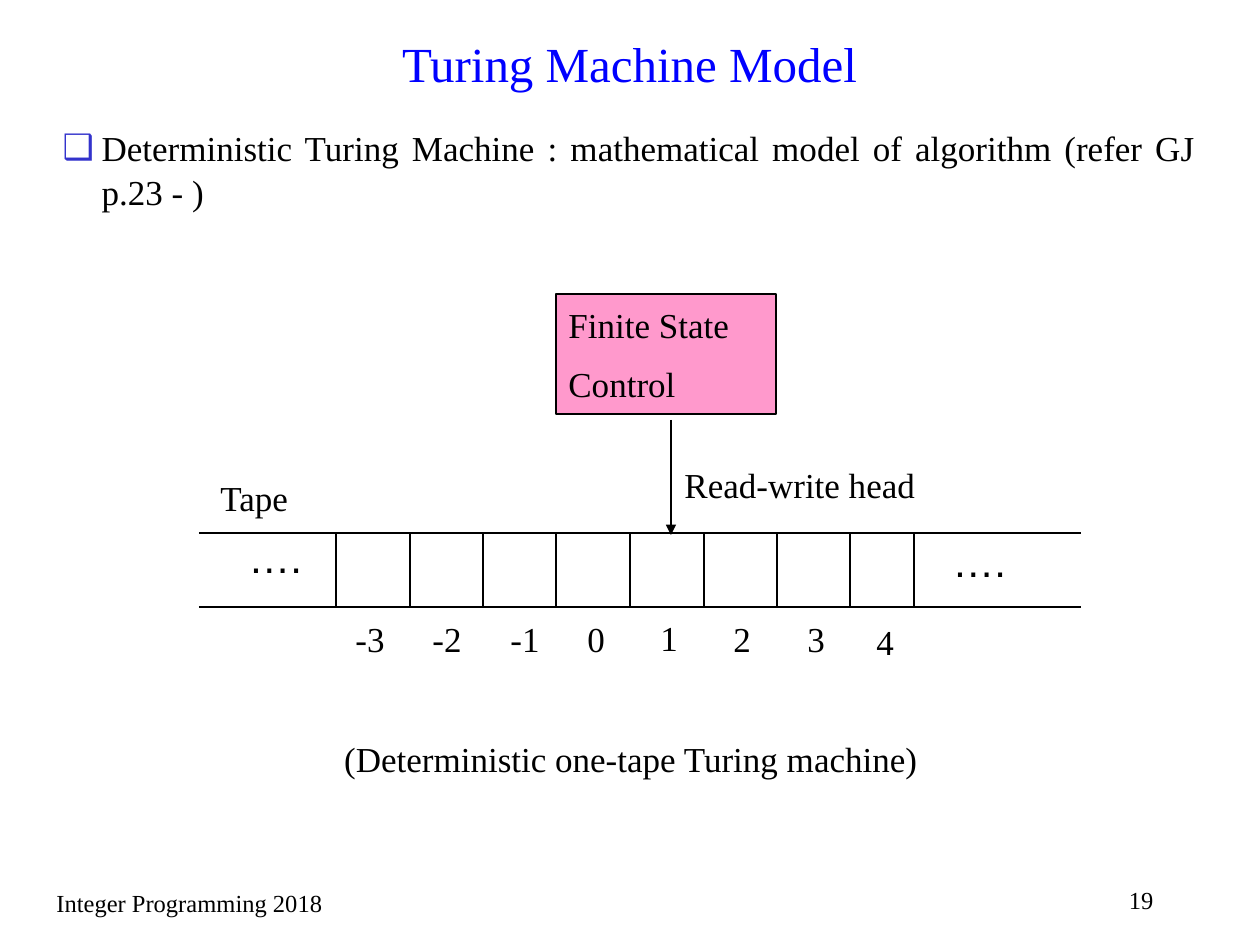
from lxml.etree import SubElement
from pptx import Presentation
from pptx.dml.color import RGBColor
from pptx.enum.shapes import MSO_CONNECTOR, MSO_SHAPE
from pptx.enum.text import MSO_ANCHOR, MSO_AUTO_SIZE, PP_ALIGN
from pptx.oxml.ns import qn
from pptx.util import Emu, Pt

COLORS = {
    "title": "0000FF",
    "text": "000000",
    "bullet": "3333CC",
    "control": "FF99CC",
    "line": "000000",
}
PX_PER_INCH = 126


def px(length):
    return Emu(round(length * 914400 / PX_PER_INCH))


def color(name):
    return RGBColor.from_string(COLORS[name])


class SlideBuilder:
    """Holds the text style and the slide being drawn."""

    font_name = "Times New Roman"
    font_size = 20

    def __init__(self, slide):
        self.slide = slide

    def set_text(self, frame, words, size=None, font=None, ink="text",
                 align=PP_ALIGN.LEFT, space_before=0):
        frame.auto_size = MSO_AUTO_SIZE.NONE
        frame.text = words
        for paragraph in frame.paragraphs:
            paragraph.alignment = align
            paragraph.space_before = Pt(space_before)
            paragraph.font.name = font or self.font_name
            paragraph.font.size = Pt(size or self.font_size)
            paragraph.font.color.rgb = color(ink)

    def place(self, placeholder, box):
        (placeholder.left, placeholder.top,
         placeholder.width, placeholder.height) = map(px, box)

    def title(self, box, words):
        title = self.slide.shapes.title
        self.place(title, box)
        self.set_text(title.text_frame, words, 28, ink="title", align=PP_ALIGN.CENTER)
        title.text_frame.vertical_anchor = MSO_ANCHOR.MIDDLE

    def bullet_list(self, box, words):
        body = self.slide.placeholders[1]
        self.place(body, box)
        self.set_text(body.text_frame, words, align=PP_ALIGN.JUSTIFY, space_before=4)
        for paragraph in body.text_frame.paragraphs:
            paragraph.line_spacing = 1.05
            properties = paragraph._p.get_or_add_pPr()
            properties.set("marL", str(px(39)))
            properties.set("indent", str(px(-39)))
            # bullet parts must come before the default run properties
            run_defaults = properties.find(qn("a:defRPr"))
            bullet_color = SubElement(properties, qn("a:buClr"))
            SubElement(bullet_color, qn("a:srgbClr"), val=COLORS["bullet"])
            SubElement(properties, qn("a:buChar"), char="❑")
            properties.append(run_defaults)

    def label(self, box, words, wrap=False, **style):
        frame = self.slide.shapes.add_textbox(*map(px, box)).text_frame
        self.set_text(frame, words, **style)
        frame.word_wrap = wrap

    def block(self, box, words, fill):
        block = self.slide.shapes.add_shape(MSO_SHAPE.RECTANGLE, *map(px, box))
        block.shadow.inherit = False
        block.fill.solid()
        block.fill.fore_color.rgb = color(fill)
        block.line.color.rgb = color("line")
        block.line.width = Pt(1.5)
        self.set_text(block.text_frame, words, space_before=10)
        block.text_frame.vertical_anchor = MSO_ANCHOR.MIDDLE

    def line(self, x1, y1, x2, y2, arrow=False):
        line = self.slide.shapes.add_connector(
            MSO_CONNECTOR.STRAIGHT, px(x1), px(y1), px(x2), px(y2))
        line.line.color.rgb = color("line")
        line.line.width = Pt(0.75)
        if arrow:
            SubElement(line.line._get_or_add_ln(), qn("a:tailEnd"), type="triangle")
        SubElement(line._element.spPr, qn("a:effectLst"))


def main():
    deck = Presentation()
    deck.slide_width, deck.slide_height = px(1260), px(945)
    page = SlideBuilder(deck.slides.add_slide(deck.slide_layouts[1]))

    page.title((94, 26, 1071, 74), "Turing Machine Model")
    page.bullet_list(
        (50, 118, 1158, 101),
        "Deterministic Turing Machine : mathematical model of algorithm (refer GJ p.23 - )")
    page.block((556, 294, 220, 120), "Finite State\nControl", "control")

    tape_left, tape_right, tape_top, tape_bottom = 199, 1081, 533, 607
    for edge in (tape_top, tape_bottom):
        page.line(tape_left, edge, tape_right, edge)
    dividers = [336 + round(73.5 * i) for i in range(8)] + [914]
    for x in dividers:
        page.line(x, tape_top, x, tape_bottom)

    # left and top of the label under each cell
    cell_labels = {
        "-3": (343, 611), "-2": (420, 611), "-1": (498, 611), "0": (575, 611),
        "1": (648, 610), "2": (721, 611), "3": (795, 611), "4": (864, 614),
    }
    for number, (left, top) in cell_labels.items():
        page.label((left, top, 57 if number.startswith("-") else 43, 55), number)
    for left, top in ((236, 525), (940, 529)):
        page.label((left, top, 79, 63), "….", size=24, font="Arial")

    page.line(671, 420, 671, 535, arrow=True)
    page.label((672, 457, 258, 55), "Read-write head")
    page.label((208, 470, 93, 55), "Tape")
    page.label((330, 731, 602, 55), "(Deterministic one-tape Turing machine)",
               align=PP_ALIGN.CENTER)

    page.label((44, 882, 348, 42), "Integer Programming 2018", wrap=True, size=14)
    page.label((1017, 879, 149, 44), "19", wrap=True, size=14, align=PP_ALIGN.RIGHT)
    deck.save("out.pptx")


if __name__ == "__main__":
    main()
